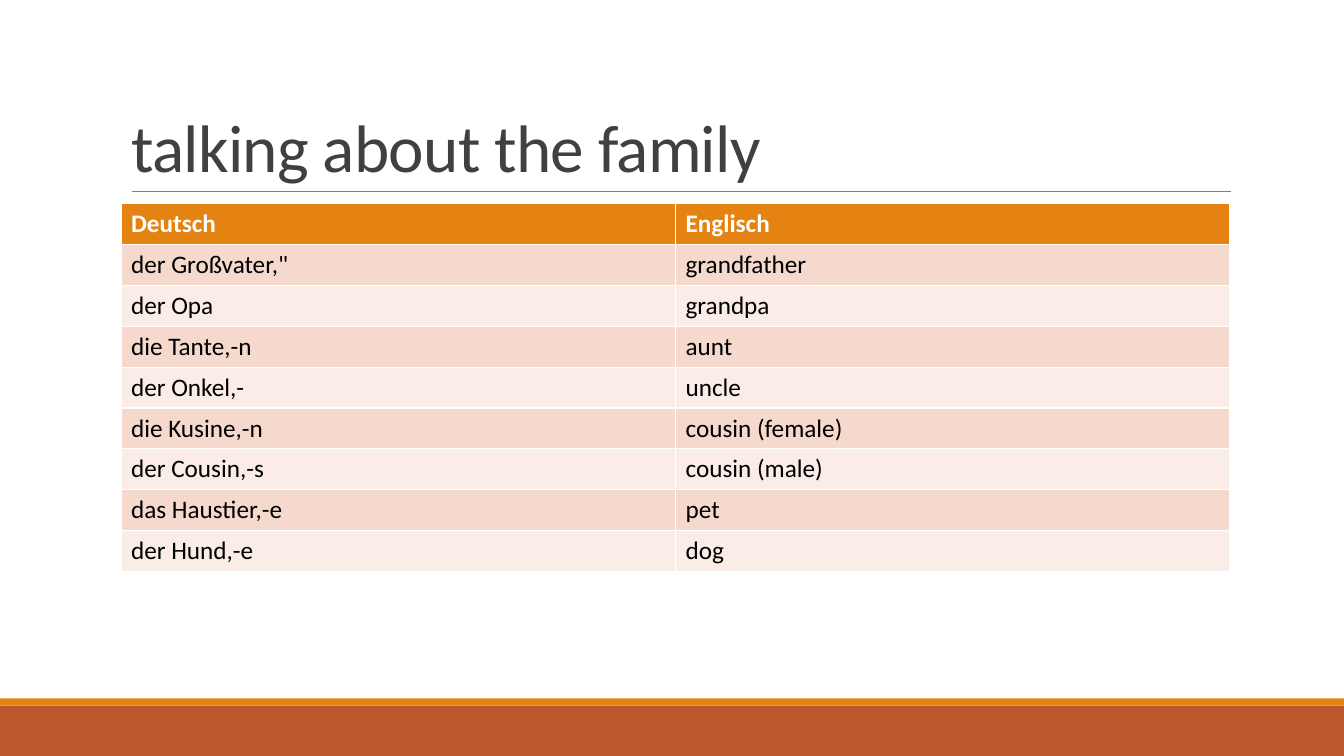
import lxml.etree
import pptx
import pptx.dml.color
import pptx.enum.shapes
import pptx.enum.text
import pptx.oxml.ns
import pptx.util

Inches = pptx.util.Inches
Pt = pptx.util.Pt

COLORS = {
    "orange": "E48312",
    "rust": "BD582C",
    "rule": "808080",
    "title": "404040",
    "header_text": "FFFFFF",
    "body_text": "000000",
    "dark_band": "F5D9CC",
    "light_band": "FAEDE7",
}

FORMATS = {
    "title": {"name": "Calibri", "size": Pt(48), "bold": False},
    "header_text": {"name": "Calibri", "size": Pt(18), "bold": True},
    "body_text": {"name": "Calibri", "size": Pt(18), "bold": False},
}

VOCABULARY = [
    ("Deutsch", "Englisch"),
    ("der Großvater,\"", "grandfather"),
    ("der Opa", "grandpa"),
    ("die Tante,-n", "aunt"),
    ("der Onkel,-", "uncle"),
    ("die Kusine,-n", "cousin (female)"),
    ("der Cousin,-s", "cousin (male)"),
    ("das Haustier,-e", "pet"),
    ("der Hund,-e", "dog"),
]


def color(name):
    return pptx.dml.color.RGBColor.from_string(COLORS[name])


def write_text(paragraph, text, style):
    run = paragraph.add_run()
    run.text = text
    for attribute, value in FORMATS[style].items():
        setattr(run.font, attribute, value)
    run.font.color.rgb = color(style)
    return run


def add_footer_bands(slide, left, top, width, height):
    # Thin orange strip above a rust band
    strip = 0.07
    bands = [("rust", top + strip, height - strip), ("orange", top, strip)]
    for name, band_top, band_height in bands:
        shape = slide.shapes.add_shape(
            pptx.enum.shapes.MSO_SHAPE.RECTANGLE,
            Inches(left), Inches(band_top), Inches(width), Inches(band_height))
        shape.shadow.inherit = False
        shape.fill.solid()
        shape.fill.fore_color.rgb = color(name)
        shape.line.fill.background()


def add_title(slide, text, left, top, width, height):
    # Title placeholder, resting on a thin rule
    title = slide.shapes.title
    box = {"left": left, "top": top, "width": width, "height": height}
    for attribute, value in box.items():
        setattr(title, attribute, Inches(value))
    frame = title.text_frame
    frame.word_wrap = True
    frame.auto_size = pptx.enum.text.MSO_AUTO_SIZE.NONE
    frame.vertical_anchor = pptx.enum.text.MSO_ANCHOR.BOTTOM
    paragraph = frame.paragraphs[0]
    paragraph.alignment = pptx.enum.text.PP_ALIGN.LEFT
    paragraph.line_spacing = 0.85
    run = write_text(paragraph, text, "title")
    run._r.get_or_add_rPr().set("spc", "-50")

    bottom = Inches(top + height)
    rule = slide.shapes.add_connector(
        pptx.enum.shapes.MSO_CONNECTOR.STRAIGHT,
        Inches(left + 0.11), bottom, Inches(left + width + 0.01), bottom)
    rule.line.color.rgb = color("rule")
    rule.line.width = Pt(0.5)
    lxml.etree.SubElement(
        rule._element.spPr, pptx.oxml.ns.qn("a:effectLst"))


def add_vocabulary_table(slide, rows, left, top, width, height):
    # Header row, then alternating bands; the table style draws white borders
    table = slide.shapes.add_table(
        len(rows), len(rows[0]), Inches(left), Inches(top),
        Inches(width), Inches(height)).table
    for row_index, words in enumerate(rows):
        if row_index == 0:
            fill, style = "orange", "header_text"
        else:
            fill = "dark_band" if row_index % 2 else "light_band"
            style = "body_text"
        for column_index, word in enumerate(words):
            cell = table.cell(row_index, column_index)
            cell.fill.solid()
            cell.fill.fore_color.rgb = color(fill)
            write_text(cell.text_frame.paragraphs[0], word, style)


def main():
    presentation = pptx.Presentation()
    presentation.slide_width = Inches(13.33)
    presentation.slide_height = Inches(7.5)
    title_only = presentation.slide_layouts[5]
    slide = presentation.slides.add_slide(title_only)

    add_footer_bands(slide, 0, 6.93, 13.33, 0.57)
    add_title(slide, "talking about the family", 1.2, 0.31, 11, 1.59)
    add_vocabulary_table(slide, VOCABULARY, 1.2, 2.02, 11, 3.65)
    presentation.save("out.pptx")


if __name__ == "__main__":
    main()
